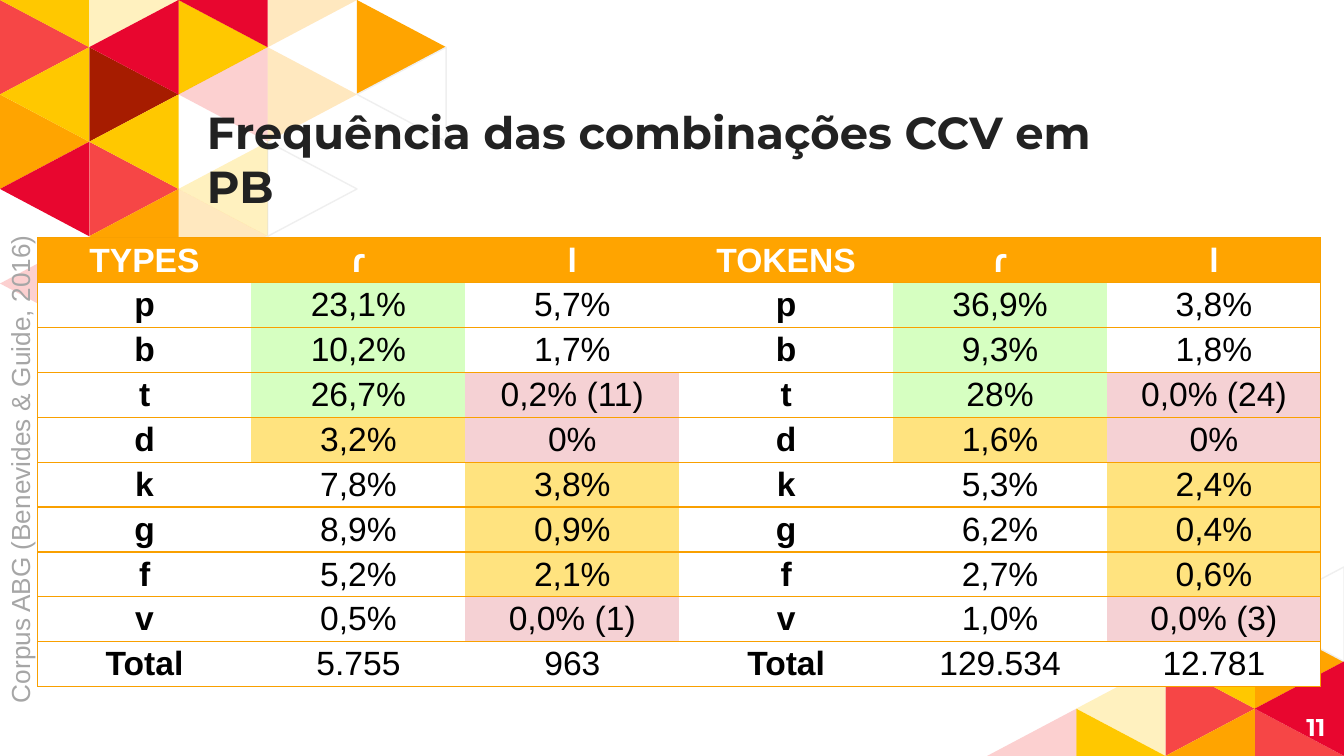
from lxml import etree
from pptx import Presentation
from pptx import util as u
from pptx.dml.color import RGBColor
from pptx.enum import text
from pptx.oxml.ns import qn

WIDTH, HEIGHT = 10, 10 * 9 / 16
COL, ROW = 3.32 / 5, 2.11 / 6

COLORS = {
    "orange": "FFA400", "yellow": "FFC800", "coral": "F64646", "red": "E8062F",
    "brown": "A61C00", "white": "FFFFFF", "outline": "EFEFEF", "title": "222222",
    "black": "000000", "caption": "A6A6A6", "rule": "F9A000",
    "high": "D6FFC1", "low": "FFE37F", "rare": "F5D1D4",
}

TOP_LEFT = [
    ("right", 0, 2, "orange"), ("right", 1, 1, "brown"), ("right", 1, 3, "coral"),
    ("right", 3, 1, "orange", 25), ("right", 2, 4, "orange", 25), ("right", 3, 3, "white"),
    ("right", 0, 0, "coral"), ("right", 1, -1, "yellow", 25), ("right", 2, 0, "yellow"),
    ("right", 3, -1, "orange", 25), ("right", 4, 0, "orange"),
    ("left", 0, 1, "yellow"), ("left", 1, 2, "yellow"), ("left", 0, 3, "red"),
    ("left", 1, 4, "orange"), ("left", 0, 5, "coral", 25), ("left", 2, 1, "coral", 25),
    ("left", 2, 3, "yellow", 25), ("left", 2, 5, "white"), ("left", 4, 1, "white"),
    ("left", 0, -1, "yellow"), ("left", 1, 0, "red"), ("left", 2, -1, "red"),
]

BOTTOM_RIGHT = [
    ("right", 2, 0, "orange", 25), ("right", 3, 1, "orange"), ("right", 1, 3, "yellow"),
    ("right", 2, 2, "coral"), ("right", 3, 3, "coral"),
    ("left", 1, 0, "white"), ("left", 3, 0, "white"), ("left", 2, 1, "yellow"),
    ("left", 1, 2, "yellow", 25), ("left", 2, 3, "orange"), ("left", 3, 2, "red"),
    ("left", 0, 3, "coral", 25),
]

HEADER = ("TYPES", "ɾ", "l", "TOKENS", "ɾ", "l")
FREQUENCIES = [
    ("p", "23,1%", "5,7%", "36,9%", "3,8%", "high", "white"),
    ("b", "10,2%", "1,7%", "9,3%", "1,8%", "high", "white"),
    ("t", "26,7%", "0,2% (11)", "28%", "0,0% (24)", "high", "rare"),
    ("d", "3,2%", "0%", "1,6%", "0%", "low", "rare"),
    ("k", "7,8%", "3,8%", "5,3%", "2,4%", "white", "low"),
    ("g", "8,9%", "0,9%", "6,2%", "0,4%", "white", "low"),
    ("f", "5,2%", "2,1%", "2,7%", "0,6%", "white", "low"),
    ("v", "0,5%", "0,0% (1)", "1,0%", "0,0% (3)", "white", "rare"),
    ("Total", "5.755", "963", "129.534", "12.781", "white", "white"),
]


def rgb(name):
    return RGBColor.from_string(COLORS[name])


class Deck:
    def __init__(self):
        self.prs = Presentation()
        self.prs.slide_width, self.prs.slide_height = u.Inches(WIDTH), u.Inches(HEIGHT)
        self.s = self.prs.slides.add_slide(self.prs.slide_layouts[5])

    def add_text(self, tf, content, color, font="Arial", size=18, bold=False,
                 align=text.PP_ALIGN.LEFT):
        p = tf.paragraphs[0]
        p.alignment, p.line_spacing = align, 1.0
        r = p.add_run()
        r.text = content
        for key, value in {"name": font, "size": u.Pt(size), "bold": bold}.items():
            setattr(r.font, key, value)
        r.font.color.rgb = rgb(color)

    def frame(self, sp, anchor, margin_y=0.1):
        tf = sp.text_frame
        formats = {
            "word_wrap": True, "auto_size": text.MSO_AUTO_SIZE.NONE,
            "vertical_anchor": anchor,
            "margin_left": u.Inches(0.1), "margin_right": u.Inches(0.1),
            "margin_top": u.Inches(margin_y), "margin_bottom": u.Inches(margin_y),
        }
        for key, value in formats.items():
            setattr(tf, key, value)
        return tf

    def triangle(self, left, top, direction, col, row, color, opacity=100):
        base, tip = (col, col + 1) if direction == "right" else (col + 1, col)
        points = []
        for x, y in ((base, row), (base, row + 2), (tip, row + 1)):
            inside = min(max(top + y * ROW, 0), HEIGHT)
            points.append((u.Inches(left + x * COL), u.Inches(inside)))
        builder = self.s.shapes.build_freeform(*points[0])
        builder.add_line_segments(points[1:], close=True)
        sp = builder.convert_to_shape()
        sp.shadow.inherit = False
        sp.fill.solid()
        sp.fill.fore_color.rgb = rgb(color)
        if opacity < 100:
            srgb = sp._element.spPr.find(".//" + qn("a:srgbClr"))
            etree.SubElement(srgb, qn("a:alpha"), val=str(opacity * 1000))
        if color == "white":
            sp.line.color.rgb = rgb("outline")
            sp.line.width = u.Pt(0.75)
        else:
            sp.line.fill.background()

    def title(self, content, *box):
        sp = self.s.shapes.title
        sp._element.getparent().append(sp._element)
        sp.left, sp.top, sp.width, sp.height = map(u.Inches, box)
        tf = self.frame(sp, text.MSO_ANCHOR.BOTTOM)
        self.add_text(tf, content, "title", "Montserrat", 24, True)

    def label(self, content, box, anchor, margin_y=0.1, rotation=0, **style):
        sp = self.s.shapes.add_textbox(*map(u.Inches, box))
        sp.rotation = rotation
        self.add_text(self.frame(sp, anchor, margin_y), content, **style)

    def borders(self, cell, sides):
        tcPr = cell._tc.get_or_add_tcPr()
        for side in "LRTB":
            ln = etree.SubElement(tcPr, qn("a:ln" + side), w=str(u.Pt(0.75)))
            if side in sides:
                fill = etree.SubElement(ln, qn("a:solidFill"))
                etree.SubElement(fill, qn("a:srgbClr"), val=COLORS["rule"])
            else:
                etree.SubElement(ln, qn("a:noFill"))

    def table(self, rows, fills, *box):
        last = len(rows[0]) - 1
        table = self.s.shapes.add_table(len(rows), last + 1, *map(u.Inches, box)).table
        table.horz_banding = False
        for i, row in enumerate(rows):
            table.rows[i].height = u.Inches(box[3] / len(rows))
            for j, content in enumerate(row):
                cell = table.cell(i, j)
                self.borders(cell, "TB" + "L" * (j == 0) + "R" * (j == last))
                cell.fill.solid()
                cell.fill.fore_color.rgb = rgb(fills[i][j])
                cell.vertical_anchor = text.MSO_ANCHOR.MIDDLE
                cell.margin_left = cell.margin_right = u.Inches(0.06)
                cell.margin_top = cell.margin_bottom = 0
                self.add_text(cell.text_frame, content, "black" if i else "white",
                              bold=i == 0 or j % 3 == 0, align=text.PP_ALIGN.CENTER)


def main():
    deck = Deck()
    for item in BOTTOM_RIGHT:
        deck.triangle(WIDTH - 4 * COL, HEIGHT - 4 * ROW, *item)
    for item in TOP_LEFT:
        deck.triangle(0, 0, *item)

    deck.title("Frequência das combinações CCV em PB", 1.44, 0.95, 7.22, 0.73)
    deck.label("11", (9.36, 5.19, 0.6, 0.43), text.MSO_ANCHOR.MIDDLE, color="white",
               font="Montserrat", size=13, bold=True, align=text.PP_ALIGN.RIGHT)

    rows, fills = [HEADER], [["orange"] * 6]
    for name, type_r, type_l, token_r, token_l, fill_r, fill_l in FREQUENCIES:
        rows.append((name, type_r, type_l, name, token_r, token_l))
        fills.append(["white", fill_r, fill_l] * 2)
    deck.table(rows, fills, 0.28, 1.77, 9.55, 3.34)

    deck.label("Corpus ABG (Benevides & Guide, 2016)", (-2.76, 2.25, 5.82, 0.34),
               text.MSO_ANCHOR.TOP, margin_y=0.05, rotation=270, color="caption", size=14)
    deck.prs.save("out.pptx")


if __name__ == "__main__":
    main()
